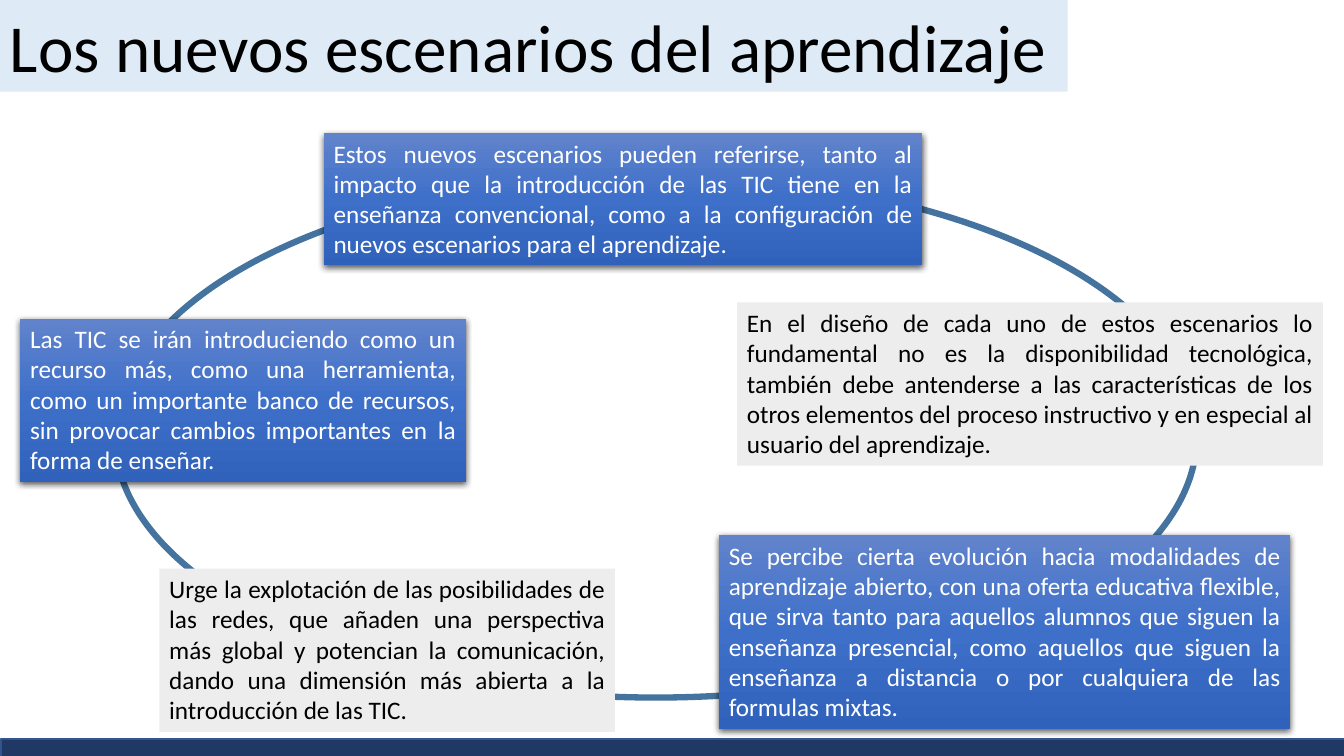
"""Builds a slide with five notes linked by an oval ring."""
from copy import deepcopy

from lxml import etree
from pptx import Presentation
from pptx import util as u
from pptx.dml import color
from pptx.enum import shapes, text
from pptx.oxml import ns

HUES = {
    "ring": "43739E", "title": "DEEBF7", "pale": "EDEDED",
    "foot": "203864", "edge": "325491", "ink": "000000", "white": "FFFFFF",
    "top": "6183CB", "mid": "3E70CA", "low": "3062BB",
}

NOTES = [
    ((3.21, 1.32, 5.94, 1.31), True,
     "Estos nuevos escenarios pueden referirse, tanto al impacto que la "
     "introducción de las TIC tiene en la enseñanza convencional, como a la "
     "configuración de nuevos escenarios para el aprendizaje."),
    ((0.2, 3.16, 4.42, 1.62), True,
     "Las TIC se irán introduciendo como un recurso más, como una "
     "herramienta, como un importante banco de recursos, sin provocar "
     "cambios importantes en la forma de enseñar."),
    ((1.58, 5.64, 4.52, 1.62), False,
     "Urge la explotación de las posibilidades de las redes, que añaden una "
     "perspectiva más global y potencian la comunicación, dando una "
     "dimensión más abierta a la introducción de las TIC."),
    ((7.13, 5.31, 5.67, 1.92), True,
     "Se percibe cierta evolución hacia modalidades de aprendizaje abierto, "
     "con una oferta educativa flexible, que sirva tanto para aquellos "
     "alumnos que siguen la enseñanza presencial, como aquellos que siguen "
     "la enseñanza a distancia o por cualquiera de las formulas mixtas."),
    ((7.31, 3, 5.81, 1.62), False,
     "En el diseño de cada uno de estos escenarios lo fundamental no es la "
     "disponibilidad tecnológica, también debe antenderse a las "
     "características de los otros elementos del proceso instructivo y en "
     "especial al usuario del aprendizaje."),
]


def tint(name):
    return color.RGBColor.from_string(HUES[name])


def write(shape, words, size=18, hue="ink", align="LEFT", wrap=True):
    frame = shape.text_frame
    frame.word_wrap = wrap
    frame.auto_size = text.MSO_AUTO_SIZE.SHAPE_TO_FIT_TEXT
    frame.vertical_anchor = text.MSO_ANCHOR.TOP
    para = frame.paragraphs[0]
    para.alignment = getattr(text.PP_ALIGN, align)
    run = para.add_run()
    run.text = words
    run.font.name = "Calibri"
    run.font.size = u.Pt(size)
    run.font.color.rgb = tint(hue)


class Board:
    """Holds the style and the current slide."""

    def __init__(self, deck, font="Calibri"):
        self.font = font
        self.slide = deck.slides.add_slide(deck.slide_layouts[6])

    def form(self, kind, box, fill=None, line=None, width=1):
        shape = self.slide.shapes.add_shape(kind, *map(u.Inches, box))
        shape.shadow.inherit = False
        if fill:
            shape.fill.solid()
            shape.fill.fore_color.rgb = tint(fill)
        else:
            shape.fill.background()
        if line:
            shape.line.color.rgb = tint(line)
            shape.line.width = u.Pt(width)
        else:
            shape.line.fill.background()
        return shape

    def ring(self, box):
        kind = shapes.MSO_SHAPE.FLOWCHART_CONNECTOR
        return self.form(kind, box, line="ring", width=4.5)

    def bar(self, box, fill, line=None):
        return self.form(shapes.MSO_SHAPE.RECTANGLE, box, fill, line)

    def note(self, box, vivid, words):
        shape = self.bar(box, "pale")
        if vivid:
            self.shade(shape)
            self.cast(shape)
        write(shape, words, hue="white" if vivid else "ink", align="JUSTIFY")

    def shade(self, shape):
        shape.fill.gradient()
        shape.fill.gradient_angle = 270
        stops = shape._element.spPr.find(".//" + ns.qn("a:gsLst"))
        stops.insert(1, deepcopy(stops[0]))
        hues = ("top", "mid", "low")
        for rank, stop in enumerate(shape.fill.gradient_stops):
            stop.position = rank / 2
            stop.color.rgb = tint(hues[rank])

    def cast(self, shape):
        glow = shape._element.spPr.find(ns.qn("a:effectLst"))
        drop = etree.SubElement(
            glow, ns.qn("a:outerShdw"), blurRad=str(u.Pt(4.5)),
            dist=str(u.Pt(1.5)), dir="5400000", algn="ctr", rotWithShape="0")
        shade = etree.SubElement(drop, ns.qn("a:srgbClr"), val=HUES["ink"])
        etree.SubElement(shade, ns.qn("a:alpha"), val="63000")


def main():
    deck = Presentation()
    deck.slide_width = u.Inches(13.33)
    deck.slide_height = u.Inches(7.5)
    board = Board(deck)
    board.ring((1.14, 1.74, 10.73, 5.18))
    title = board.bar((0, 0, 10.59, 0.91), "title")
    write(title, "Los nuevos escenarios del aprendizaje", size=48, wrap=False)
    for box, vivid, words in NOTES:
        board.note(box, vivid, words)
    board.bar((0.01, 7.33, 13.33, 0.24), "foot", "edge")
    deck.save("out.pptx")


if __name__ == "__main__":
    main()
